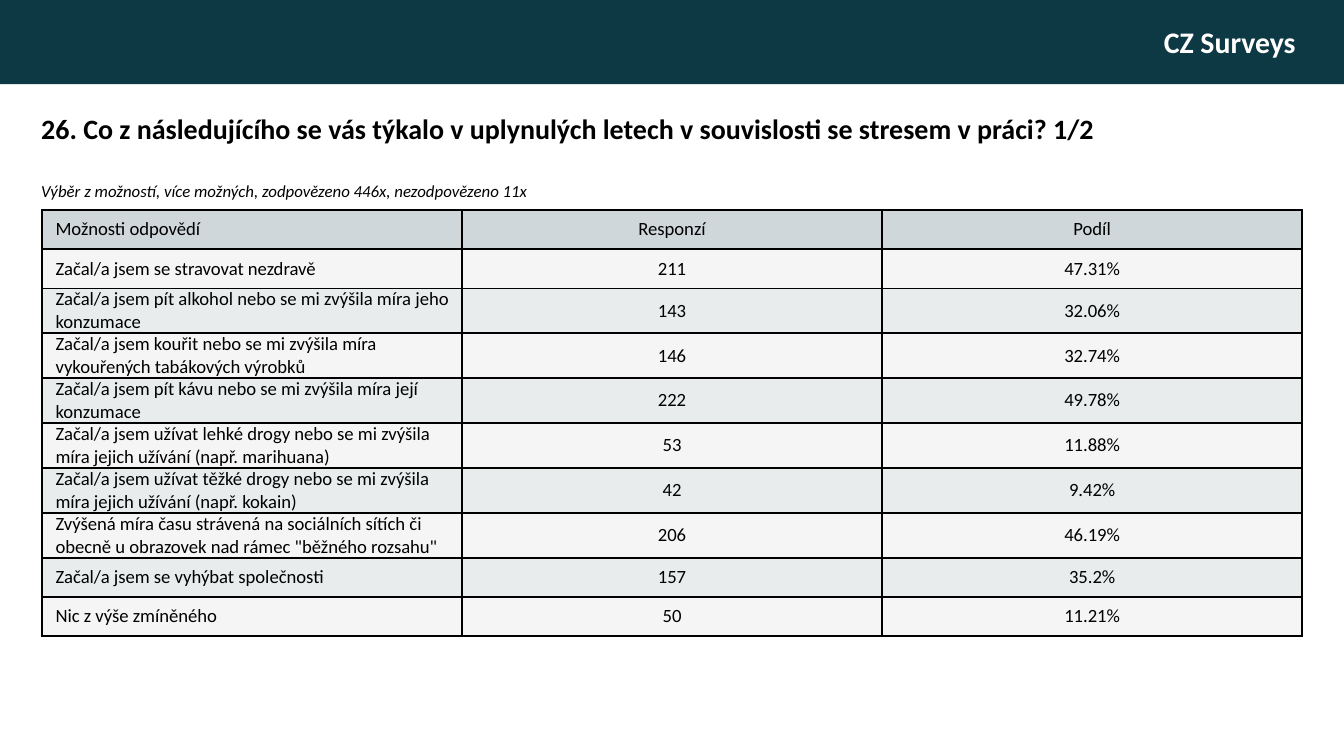
from dataclasses import dataclass

from lxml import etree
from pptx import Presentation
from pptx.dml.color import RGBColor
from pptx.enum.shapes import MSO_SHAPE
from pptx.enum.text import MSO_ANCHOR, PP_ALIGN
from pptx.oxml.ns import qn
from pptx.util import Cm, Pt

RECTANGLE = MSO_SHAPE.RECTANGLE
MIDDLE = MSO_ANCHOR.MIDDLE
LEFT, CENTER, RIGHT = PP_ALIGN.LEFT, PP_ALIGN.CENTER, PP_ALIGN.RIGHT

BANNER = "CZ Surveys"
TITLE = "26. Co z následujícího se vás týkalo v uplynulých letech v souvislosti se stresem v práci? 1/2"
NOTE = "Výběr z možností, více možných, zodpovězeno 446x, nezodpovězeno 11x"
HEADERS = ("Možnosti odpovědí", "Responzí", "Podíl")
ANSWERS = [
    ("Začal/a jsem se stravovat nezdravě", "211", "47.31%"),
    ("Začal/a jsem pít alkohol nebo se mi zvýšila míra jeho konzumace", "143", "32.06%"),
    ("Začal/a jsem kouřit nebo se mi zvýšila míra vykouřených tabákových výrobků", "146", "32.74%"),
    ("Začal/a jsem pít kávu nebo se mi zvýšila míra její konzumace", "222", "49.78%"),
    ("Začal/a jsem užívat lehké drogy nebo se mi zvýšila míra jejich užívání (např. marihuana)", "53", "11.88%"),
    ("Začal/a jsem užívat těžké drogy nebo se mi zvýšila míra jejich užívání (např. kokain)", "42", "9.42%"),
    ('Zvýšená míra času strávená na sociálních sítích či obecně u obrazovek nad rámec "běžného rozsahu"', "206", "46.19%"),
    ("Začal/a jsem se vyhýbat společnosti", "157", "35.2%"),
    ("Nic z výše zmíněného", "50", "11.21%"),
]


@dataclass(frozen=True)
class Theme:
    font: str = "Calibri"
    banner: str = "0D3944"
    white: str = "FFFFFF"
    black: str = "000000"
    header: str = "CFD7DA"
    bands: tuple = ("F5F5F5", "E8ECED")
    banner_size: float = 16
    title_size: float = 15
    note_size: float = 9
    table_size: float = 10
    border: float = 1


THEME = Theme()
SLIDE_WIDTH, SLIDE_HEIGHT = Cm(25.4), Cm(14.29)
MARGIN = Cm(0.79)
TEXT_LEFT = Cm(0.53)
ROW_HEIGHT = Cm(0.74)
CELL_INDENT = Cm(0.13)


def write(text_frame, text, size, color=THEME.black, align=LEFT, bold=False, italic=False):
    text_frame.text = text
    paragraph = text_frame.paragraphs[0]
    paragraph.alignment = align
    font = paragraph.runs[0].font
    font.name, font.size = THEME.font, Pt(size)
    font.bold, font.italic = bold, italic
    font.color.rgb = RGBColor.from_string(color)


def add_banner(slide):
    shape = slide.shapes.add_shape(RECTANGLE, 0, 0, SLIDE_WIDTH, Cm(1.59))
    shape.shadow.inherit = False
    shape.fill.solid()
    shape.fill.fore_color.rgb = RGBColor.from_string(THEME.banner)
    shape.line.fill.background()
    text_frame = shape.text_frame
    text_frame.vertical_anchor = MIDDLE
    text_frame.margin_right = Cm(0.91)
    write(text_frame, BANNER, THEME.banner_size, THEME.white, RIGHT, bold=True)


def add_text(slide, text, top, width, height, size, **style):
    text_frame = slide.shapes.add_textbox(TEXT_LEFT, top, width, height).text_frame
    text_frame.word_wrap = True
    write(text_frame, text, size, **style)


def set_borders(cell):
    properties = cell._tc.get_or_add_tcPr()
    for position, edge in enumerate(("a:lnL", "a:lnR", "a:lnT", "a:lnB")):
        line = etree.Element(qn(edge), w=str(Pt(THEME.border)))
        fill = etree.SubElement(line, qn("a:solidFill"))
        etree.SubElement(fill, qn("a:srgbClr"), val=THEME.black)
        properties.insert(position, line)


def fill_cell(cell, text, color, is_answer):
    cell.vertical_anchor = MIDDLE
    cell.margin_left = CELL_INDENT if is_answer else 0
    cell.margin_right = cell.margin_top = cell.margin_bottom = 0
    cell.fill.solid()
    cell.fill.fore_color.rgb = RGBColor.from_string(color)
    write(cell.text_frame, text, THEME.table_size, align=LEFT if is_answer else CENTER)
    if is_answer:
        properties = cell.text_frame.paragraphs[0]._p.get_or_add_pPr()
        properties.set("marL", str(CELL_INDENT))
        properties.set("indent", "0")
    set_borders(cell)


def add_results(slide):
    rows = [HEADERS, *ANSWERS]
    width = SLIDE_WIDTH - 2 * MARGIN
    table = slide.shapes.add_table(
        len(rows), len(HEADERS), MARGIN, Cm(3.97), width, ROW_HEIGHT * len(rows)
    ).table
    for row_index, values in enumerate(rows):
        table.rows[row_index].height = ROW_HEIGHT
        color = THEME.bands[(row_index - 1) % 2] if row_index else THEME.header
        for column_index, text in enumerate(values):
            fill_cell(table.cell(row_index, column_index), text, color, column_index == 0)


def main():
    presentation = Presentation()
    presentation.slide_width, presentation.slide_height = SLIDE_WIDTH, SLIDE_HEIGHT
    slide = presentation.slides.add_slide(presentation.slide_layouts[6])
    add_banner(slide)
    add_text(slide, NOTE, Cm(3.3), Cm(10.6), Cm(1.57), THEME.note_size, italic=True)
    add_results(slide)
    add_text(slide, TITLE, Cm(1.98), SLIDE_WIDTH - 2 * TEXT_LEFT, Cm(1.32), THEME.title_size, bold=True)
    presentation.save("out.pptx")


if __name__ == "__main__":
    main()
